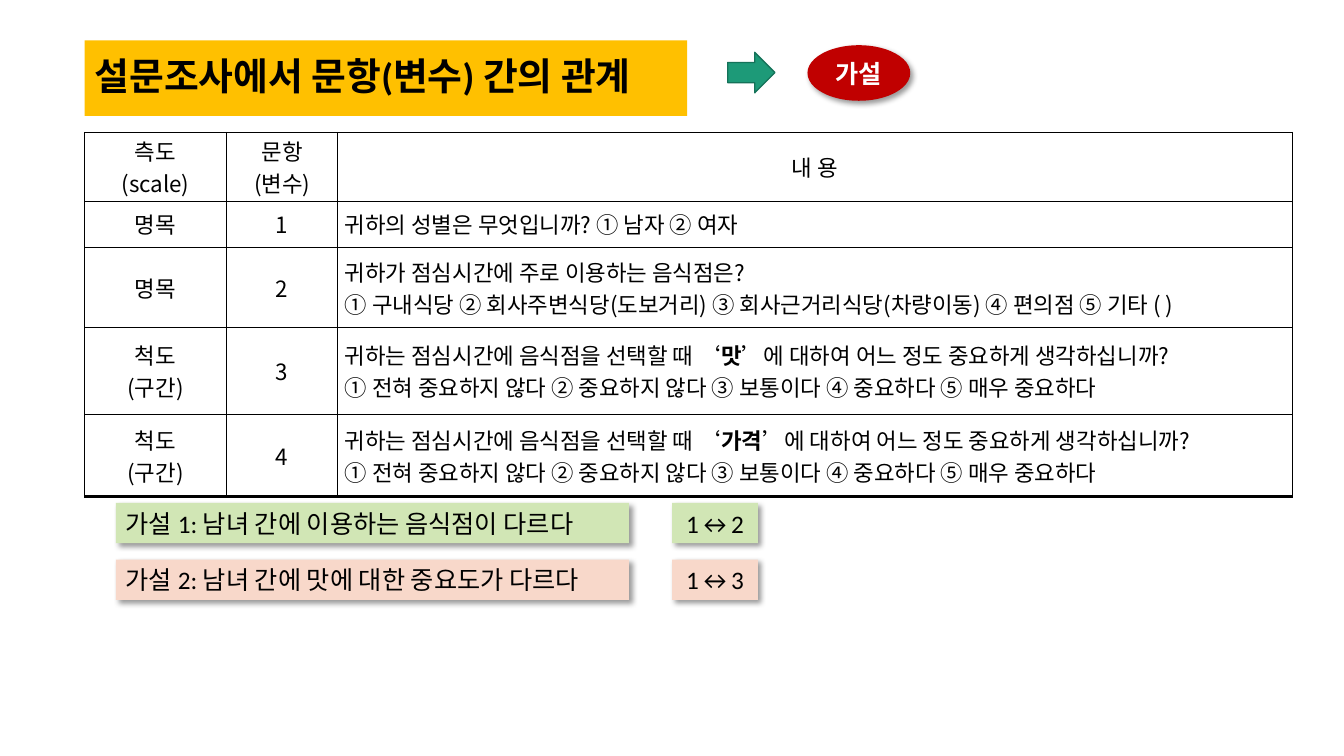
"""Build a slide relating survey questions, their scales and two hypotheses."""
from dataclasses import dataclass
from typing import Optional

from lxml import etree
from pptx import Presentation
from pptx.dml.color import RGBColor
from pptx.enum.shapes import MSO_SHAPE
from pptx.enum.text import MSO_ANCHOR, MSO_AUTO_SIZE, PP_ALIGN
from pptx.oxml import parse_xml
from pptx.oxml.ns import nsdecls, qn
from pptx.util import Cm, Pt

RECT, ARROW, OVAL = MSO_SHAPE.RECTANGLE, MSO_SHAPE.RIGHT_ARROW, MSO_SHAPE.OVAL
LEFT, CENTER, JUSTIFY = PP_ALIGN.LEFT, PP_ALIGN.CENTER, PP_ALIGN.JUSTIFY
MIDDLE = MSO_ANCHOR.MIDDLE
NO_AUTOFIT = MSO_AUTO_SIZE.NONE
LAYOUT_TITLE_ONLY = 5


@dataclass(frozen=True)
class Theme:
    font: str = "Calibri"
    table_font: str = "Noto Sans CJK KR"
    title_size: float = 27
    label_size: float = 18
    table_size: float = 16
    thin_rule: float = 0.28
    thick_rule: float = 1.98
    black: str = "000000"
    white: str = "FFFFFF"
    amber: str = "FFC000"
    green: str = "D1E6B5"
    pink: str = "F8D8CA"
    teal: str = "1D9A78"
    dark_teal: str = "157259"
    red: str = "C00000"


@dataclass(frozen=True)
class Label:
    text: str
    left: float
    top: float
    width: float
    height: float
    fill: str
    kind: MSO_SHAPE = RECT
    align: PP_ALIGN = LEFT
    line: Optional[str] = None
    color: str = "000000"
    bold: bool = False
    shadow: bool = True


@dataclass(frozen=True)
class Question:
    scale: str
    number: str
    content: str
    height: float


@dataclass(frozen=True)
class Hypothesis:
    text: str
    link: str
    fill: str


THEME = Theme()
TABLE_LEFT, TABLE_TOP = 2.13, 3.33
COLUMNS = (3.58, 2.8, 24.05)
AGREEMENT = "① 전혀 중요하지 않다 ② 중요하지 않다 ③ 보통이다 ④ 중요하다 ⑤ 매우 중요하다"
IMPORTANCE = ("귀하는 점심시간에 음식점을 선택할 때 ‘*{}*’에 대하여 "
              "어느 정도 중요하게 생각하십니까?\n" + AGREEMENT)
QUESTIONS = (
    Question("측도\n(scale)", "문항\n(변수)", "내 용", 1.35),
    Question("명목", "1", "귀하의 성별은 무엇입니까? ① 남자 ② 여자", 1.17),
    Question("명목", "2", "귀하가 점심시간에 주로 이용하는 음식점은?\n"
             "① 구내식당 ② 회사주변식당(도보거리) ③ 회사근거리식당(차량이동) "
             "④ 편의점 ⑤ 기타 ( )", 2.03),
    Question("척도\n(구간)", "3", IMPORTANCE.format("맛"), 2.18),
    Question("척도\n(구간)", "4", IMPORTANCE.format("가격"), 2.08),
)
HYPOTHESES = (
    Hypothesis("가설 1: 남녀 간에 이용하는 음식점이 다르다", "1↔2", THEME.green),
    Hypothesis("가설 2: 남녀 간에 맛에 대한 중요도가 다르다", "1↔3", THEME.pink),
)
HYPOTHESIS_TOP, HYPOTHESIS_STEP, HYPOTHESIS_HEIGHT = 12.67, 1.43, 1.02


def style_run(r, font: str, size: float, color: str, bold: bool) -> None:
    r.font.name = font
    r.font.size = Pt(size)
    r.font.bold = bold
    r.font.color.rgb = RGBColor.from_string(color)


def fill_solid(s, color: str) -> None:
    s.fill.solid()
    s.fill.fore_color.rgb = RGBColor.from_string(color)


def add_shadow(s) -> None:
    effects = s._element.spPr.find(qn("a:effectLst"))
    effects.append(parse_xml(
        f'<a:outerShdw {nsdecls("a")} blurRad="{Pt(4)}" dist="{Pt(3)}" dir="2700000" '
        f'algn="tl" rotWithShape="0"><a:srgbClr val="{THEME.black}">'
        '<a:alpha val="40000"/></a:srgbClr></a:outerShdw>'))


def add_label(slide, label: Label) -> None:
    s = slide.shapes.add_shape(label.kind, Cm(label.left), Cm(label.top),
                               Cm(label.width), Cm(label.height))
    fill_solid(s, label.fill)
    s.shadow.inherit = False
    if label.shadow:
        add_shadow(s)
    if label.line:
        s.line.color.rgb = RGBColor.from_string(label.line)
        s.line.width = Pt(1)
    else:
        s.line.fill.background()
    if label.text:
        tf = s.text_frame
        tf.text = label.text
        tf.word_wrap = True
        tf.vertical_anchor = MIDDLE
        p = tf.paragraphs[0]
        p.alignment = label.align
        style_run(p.runs[0], THEME.font, THEME.label_size, label.color, label.bold)


def set_title(slide, text: str) -> None:
    s = slide.shapes.title
    s.left, s.top, s.width, s.height = Cm(2.13), Cm(1.02), Cm(15.19), Cm(1.9)
    fill_solid(s, THEME.amber)
    tf = s.text_frame
    tf.text = text
    tf.auto_size = NO_AUTOFIT
    tf.vertical_anchor = MIDDLE
    p = tf.paragraphs[0]
    p.alignment = LEFT
    p.line_spacing = 0.9
    style_run(p.runs[0], THEME.font, THEME.title_size, THEME.black, True)


def set_borders(cell, bottom: float) -> None:
    widths = {"L": THEME.thin_rule, "R": THEME.thin_rule, "T": THEME.thin_rule, "B": bottom}
    tc_pr = cell._tc.get_or_add_tcPr()
    for i, (side, width) in enumerate(widths.items()):
        tc_pr.insert(i, parse_xml(
            f'<a:ln{side} {nsdecls("a")} w="{Pt(width)}"><a:solidFill>'
            f'<a:srgbClr val="{THEME.black}"/></a:solidFill></a:ln{side}>'))


def set_cell(cell, text: str, align: PP_ALIGN, bottom: float) -> None:
    cell.fill.background()
    cell.vertical_anchor = MIDDLE
    cell.margin_left = cell.margin_right = Cm(0.18)
    cell.margin_top = cell.margin_bottom = Cm(0.05)
    set_borders(cell, bottom)
    tf = cell.text_frame
    tf.text = text.replace("*", "")
    for p, line in zip(tf.paragraphs, text.split("\n")):
        p.alignment = align
        p.text = ""
        for i, part in enumerate(line.split("*")):
            r = p.add_run()
            r.text = part
            style_run(r, THEME.table_font, THEME.table_size, THEME.black, i % 2 == 1)
            ea = etree.SubElement(r.font._element, qn("a:ea"))
            ea.set("typeface", THEME.table_font)


def add_questions(slide) -> None:
    table = slide.shapes.add_table(
        len(QUESTIONS), len(COLUMNS), Cm(TABLE_LEFT), Cm(TABLE_TOP), Cm(sum(COLUMNS)),
        Cm(sum(q.height for q in QUESTIONS))).table
    table.first_row = table.horz_banding = False
    for column, width in zip(table.columns, COLUMNS):
        column.width = Cm(width)
    for i, q in enumerate(QUESTIONS):
        table.rows[i].height = Cm(q.height)
        bottom = THEME.thick_rule if q is QUESTIONS[-1] else THEME.thin_rule
        aligns = (CENTER, CENTER, JUSTIFY if i else CENTER)
        for j, text in enumerate((q.scale, q.number, q.content)):
            set_cell(table.cell(i, j), text, aligns[j], bottom)


def main() -> None:
    prs = Presentation()
    prs.slide_width, prs.slide_height = Cm(33.87), Cm(19.05)
    slide = prs.slides.add_slide(prs.slide_layouts[LAYOUT_TITLE_ONLY])
    set_title(slide, "설문조사에서 문항(변수) 간의 관계")
    add_questions(slide)
    for i, h in enumerate(HYPOTHESES):
        top = HYPOTHESIS_TOP + i * HYPOTHESIS_STEP
        add_label(slide, Label(h.text, 2.92, top, 12.93, HYPOTHESIS_HEIGHT, h.fill))
        add_label(slide, Label(h.link, 16.94, top, 2.16, HYPOTHESIS_HEIGHT, h.fill,
                               align=CENTER))
    add_label(slide, Label("", 18.34, 1.32, 1.19, 1.02, THEME.teal, ARROW,
                           line=THEME.dark_teal, shadow=False))
    add_label(slide, Label("가설", 20.35, 1.14, 2.59, 1.4, THEME.red, OVAL, CENTER,
                           color=THEME.white, bold=True))
    prs.save("out.pptx")


if __name__ == "__main__":
    main()
